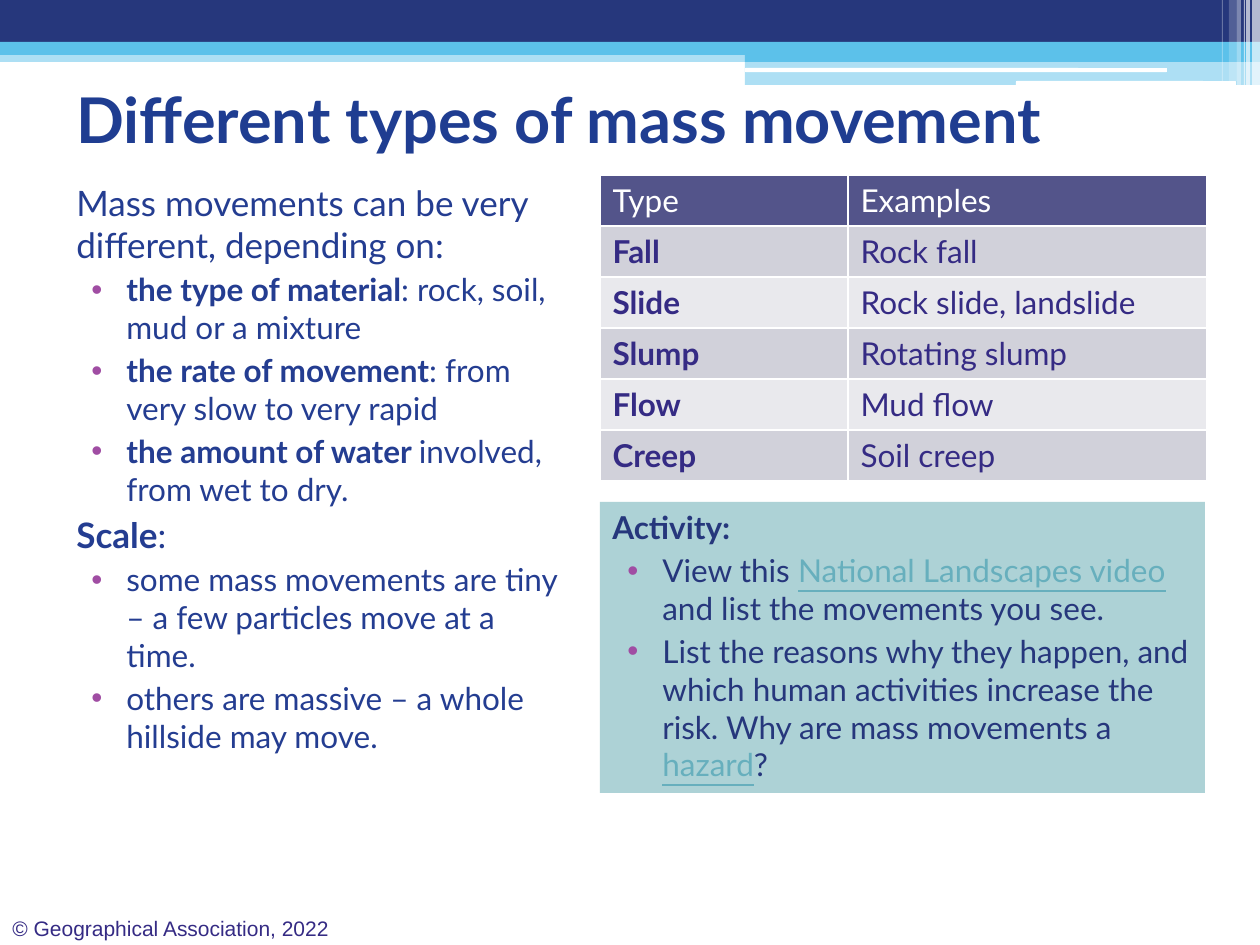
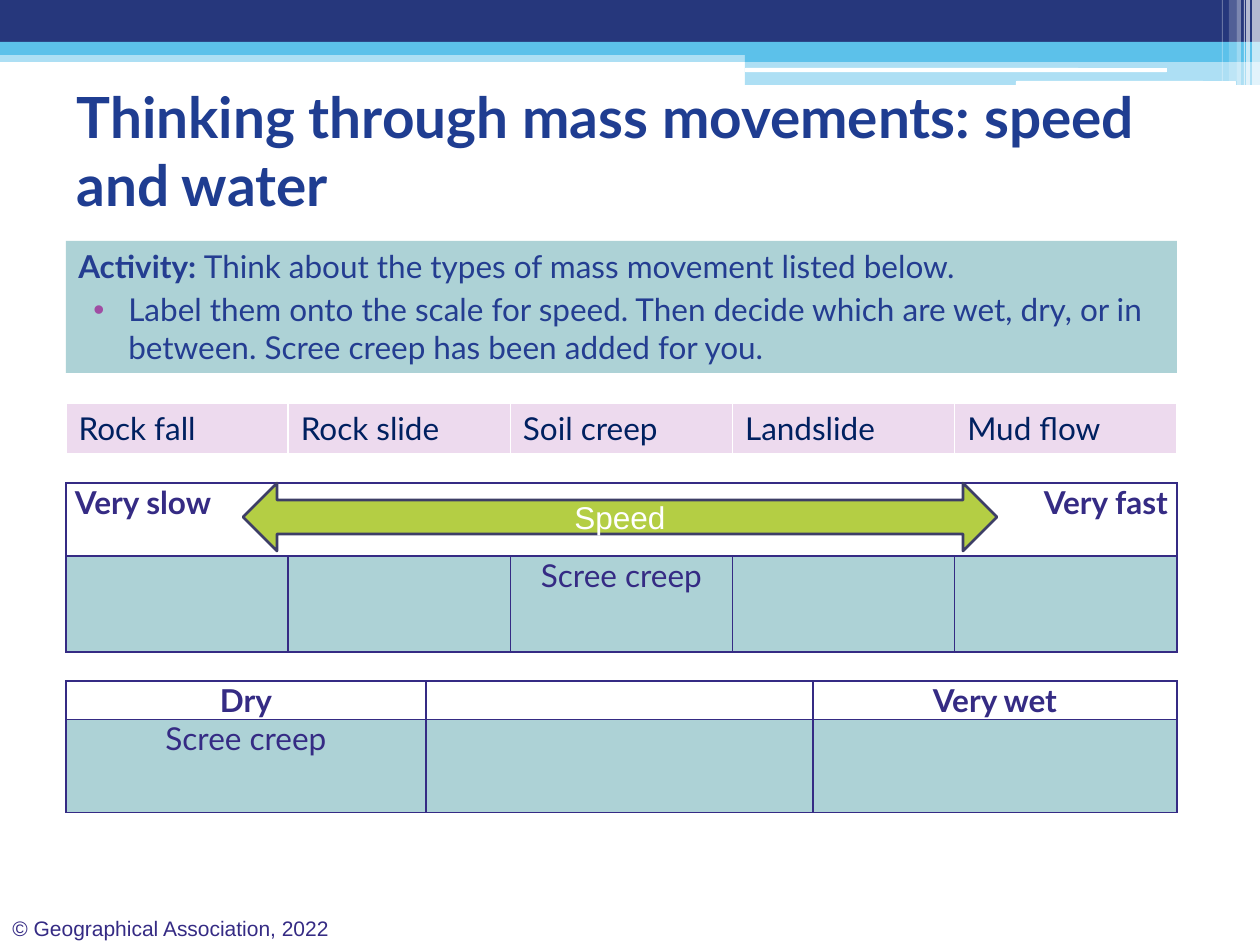
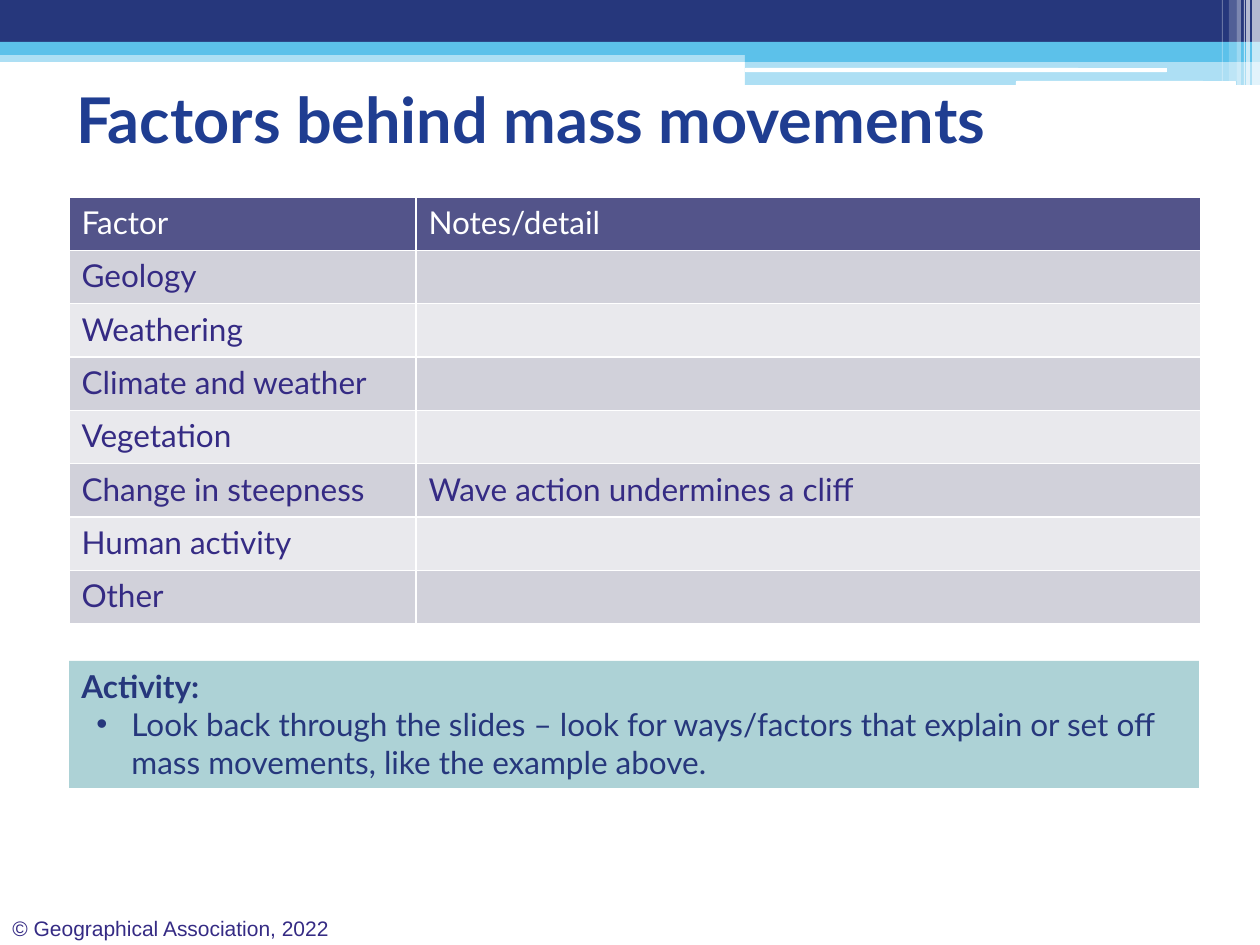
"""Build three slides on types, speed and causes of mass movement."""
from lxml import etree
from pptx import Presentation
from pptx import util as u
from pptx.dml.color import RGBColor
from pptx.enum import shapes, text
from pptx.oxml.ns import qn

PX = 914400 / 126
NAVY, BLUE, SKY, WHITE = "26377C", "243D91", "5CC1EA", "FFFFFF"
INDIGO, TEAL, PURPLE = "352B84", "ADD2D6", "A04DA3"
HEADER, BAND_DARK, BAND_LIGHT = "53548A", "D1D1DA", "E9E9ED"
BOLD = {"bold": True}
LINK = {"underline": True, "color": "67AFBD"}
LEFT, CENTER, RIGHT = text.PP_ALIGN.LEFT, text.PP_ALIGN.CENTER, text.PP_ALIGN.RIGHT
RECT, ROUND = shapes.MSO_SHAPE.RECTANGLE, shapes.MSO_SHAPE.ROUNDED_RECTANGLE
BANDS = [
    (RECT, (0, 50, 1260, 12), SKY, 50),
    (RECT, (0, 0, 1260, 42), NAVY, 100),
    (RECT, (0, 42, 1260, 13), SKY, 100),
    (RECT, (745, 49, 515, 13), SKY, 100),
    (RECT, (745, 62, 515, 23), SKY, 50),
    (ROUND, (745, 68, 422, 4), WHITE, 100),
    (ROUND, (1016, 81, 220, 5), WHITE, 100),
    (RECT, (1252, 0, 8, 85), WHITE, 65),
    (RECT, (1246, 0, 4, 85), WHITE, 65),
    (RECT, (1244, 0, 1, 85), WHITE, 60),
    (RECT, (1237, 0, 4, 85), WHITE, 40),
    (RECT, (1229, 0, 8, 81), WHITE, 20),
    (RECT, (1222, 0, 1, 81), WHITE, 30),
]


def px(length):
    return round(length * PX)


def rgb(value):
    return RGBColor.from_string(value)


def child(parent, tag, **attributes):
    return etree.SubElement(parent, qn(tag), attributes)


class Deck:
    """Hold the shared style and the current slide, and draw each kind of element."""

    def __init__(self):
        self.show = Presentation()
        self.show.slide_width, self.show.slide_height = px(1260), px(945)
        self.base = {"name": "Lato", "size": 18, "bold": False, "color": INDIGO}

    def slide(self, heading, top=45, size=36):
        self.page = self.show.slides.add_slide(self.show.slide_layouts[5])
        for kind, box, fill, opacity in BANDS:
            self.shape(kind, box, fill, opacity)
        self.textbox((0, 909, 362, 37), [["© Geographical Association, 2022"]],
                     name="Arial", size=12)
        title = self.page.shapes.title
        title.left, title.top, title.width, title.height = map(px, (64, top, 1134, 147))
        self.fill_frame(title.text_frame, [[heading]], anchor=text.MSO_ANCHOR.MIDDLE,
                        size=size, color="1F3D91", bold=True)

    def style_font(self, font, values):
        values = {**self.base, **values}
        font.color.rgb = rgb(values.pop("color"))
        values["size"] = u.Pt(values["size"])
        for key, value in values.items():
            setattr(font, key, value)

    def fill_paragraph(self, paragraph, runs, align=LEFT, bullet=None, gap=0, **style):
        if bullet:
            props = paragraph._p.get_or_add_pPr()
            props.set("marL", str(px(50)))
            props.set("indent", str(px(-35)))
            child(child(props, "a:buClr"), "a:srgbClr", val=bullet)
            child(props, "a:buFont", typeface="Arial")
            child(props, "a:buChar", char="•")
        paragraph.alignment = align
        if gap:
            paragraph.space_before = u.Pt(gap)
        for part in runs:
            words, extra = (part, {}) if isinstance(part, str) else part
            run = paragraph.add_run()
            run.text = words
            self.style_font(run.font, {**style, **extra})

    def fill_frame(self, frame, lines, anchor=text.MSO_ANCHOR.TOP, align=LEFT,
                   bullet=PURPLE, gap=3, **style):
        settings = {"word_wrap": True, "auto_size": text.MSO_AUTO_SIZE.NONE,
                    "vertical_anchor": anchor}
        for key, value in settings.items():
            setattr(frame, key, value)
        for number, line in enumerate(lines):
            paragraph = frame.add_paragraph() if number else frame.paragraphs[0]
            bulleted = line[0] == "•"
            self.fill_paragraph(paragraph, line[1:] if bulleted else line, align,
                                bullet if bulleted else None, gap if number else 0, **style)

    def textbox(self, box, lines, **style):
        frame = self.page.shapes.add_textbox(*map(px, box)).text_frame
        self.fill_frame(frame, lines, **style)

    def shape(self, kind, box, fill, opacity=100, outline=None):
        shape = self.page.shapes.add_shape(kind, *map(px, box))
        shape.shadow.inherit = False
        shape.fill.solid()
        shape.fill.fore_color.rgb = rgb(fill)
        if opacity < 100:
            color = shape._element.spPr.find(qn("a:solidFill"))[0]
            child(color, "a:alpha", val=str(opacity * 1000))
        if outline:
            shape.line.color.rgb = rgb(outline)
            shape.line.width = u.Pt(1.5)
        else:
            shape.line.fill.background()
        return shape

    def activity(self, box, lines, **style):
        self.fill_frame(self.shape(RECT, box, TEAL).text_frame, lines, **style)

    def table(self, box, rows, look, border=WHITE, widths=(), heights=(), tight=False):
        frame = self.page.shapes.add_table(len(rows), len(rows[0]), *map(px, box))
        table = frame.table
        table.first_row = table.horz_banding = False
        for column, width in zip(table.columns, widths):
            column.width = px(width)
        for row, height in zip(table.rows, heights):
            row.height = px(height)
        insets = {"margin_left": px(9), "margin_right": px(9),
                  "margin_top": 0, "margin_bottom": 0} if tight else {}
        for r, row in enumerate(rows):
            for c, words in enumerate(row):
                cell, style = table.cell(r, c), look(r, c)
                for key, value in insets.items():
                    setattr(cell, key, value)
                self.borders(cell, border, style.pop("edges", "LRTB"))
                cell.fill.solid()
                cell.fill.fore_color.rgb = rgb(style.pop("fill"))
                if words:
                    self.fill_paragraph(cell.text_frame.paragraphs[0], [words], **style)

    def borders(self, cell, color, edges):
        props = cell._tc.get_or_add_tcPr()
        for side in "LRTB":
            line = child(props, f"a:ln{side}", w=str(u.Pt(1)))
            if side in edges:
                child(child(line, "a:solidFill"), "a:srgbClr", val=color)
            else:
                child(line, "a:noFill")


def banded(row, column):
    if row == 0:
        return {"fill": HEADER, "color": WHITE}
    return {"fill": BAND_DARK if row % 2 else BAND_LIGHT}


def banded_bold(row, column):
    return {**banded(row, column), "bold": row > 0 and column == 0}


def speed_scale(row, column):
    if row:
        return {"fill": TEAL, "align": CENTER}
    edges = {0: "LTB", 4: "RTB"}.get(column, "TB")
    return {"fill": WHITE, "edges": edges, "bold": True,
            "align": RIGHT if column == 4 else LEFT}


def water_scale(row, column):
    return {"fill": TEAL if row else WHITE, "bold": row == 0, "align": CENTER}


def movement_strip(row, column):
    return {"fill": "EDDAEE", "color": "002060"}


def types_slide(deck):
    deck.slide("Different types of mass movement")
    types = [("Type", "Examples"), ("Fall", "Rock fall"),
             ("Slide", "Rock slide, landslide"), ("Slump", "Rotating slump"),
             ("Flow", "Mud flow"), ("Creep", "Soil creep")]
    deck.table((600, 175, 607, 306), types, banded_bold, widths=(248, 359))
    large = {"size": 20}
    deck.textbox((64, 175, 518, 617), [
        [("Mass movements can be very different, depending on:", large)],
        ["•", ("the type of material", BOLD), ": rock, soil, mud or a mixture"],
        ["•", ("the rate of movement", BOLD), ": from very slow to very rapid"],
        ["•", ("the amount of water ", BOLD), "involved, from wet to dry."],
        [("Scale", {**large, **BOLD}), (":", large)],
        ["•", "some mass movements are tiny – a few particles move at a time."],
        ["•", "others are massive – a whole hillside may move."],
    ], color=BLUE)
    deck.activity((600, 502, 605, 291), [
        [("Activity:", BOLD)],
        ["•", "View this ", ("National Landscapes video ", LINK),
         "and list the movements you see."],
        ["•", "List the reasons why they happen, and which human activities increase "
         "the risk. Why are mass movements a ", ("hazard", LINK), "?"],
    ], color=NAVY)


def speed_and_water_slide(deck):
    deck.slide("Thinking through mass movements: speed and water", top=76, size=32.4)
    left, width = 66, 1111
    deck.activity((left, 241, width, 132), [
        [("Activity: ", BOLD), "Think about the types of mass movement listed below."],
        ["•", "Label them onto the scale for speed. Then decide which are wet, dry, "
         "or in between. Scree creep has been added for you."],
    ], color=BLUE)
    deck.table((left, 483, width, 169),
               [("Very slow", "", "", "", "Very fast"), ("", "", "Scree creep", "", "")],
               speed_scale, INDIGO, heights=(73, 96), tight=True)
    deck.table((left, 681, width, 131),
               [("Dry", "", "Very wet"), ("Scree creep", "", "")],
               water_scale, INDIGO, (360, 387, 364), (38, 93), True)
    arrow = deck.shape(shapes.MSO_SHAPE.LEFT_RIGHT_ARROW, (243, 483, 754, 68),
                       "B4CE44", outline="3D3E66")
    deck.fill_frame(arrow.text_frame, [["Speed"]], text.MSO_ANCHOR.MIDDLE, CENTER,
                    name="Arial", color=WHITE)
    deck.table((left, 403, width, 51),
               [("Rock fall", "Rock slide", "Soil creep", "Landslide", "Mud flow")],
               movement_strip)


def factors_slide(deck):
    deck.slide("Factors behind mass movements")
    notes = {"Factor": "Notes/detail",
             "Change in steepness": "Wave action undermines a cliff"}
    factors = ["Factor", "Geology", "Weathering", "Climate and weather", "Vegetation",
               "Change in steepness", "Human activity", "Other"]
    deck.table((69, 197, 1132, 427), [(factor, notes.get(factor, "")) for factor in factors],
               banded, widths=(347, 785))
    deck.activity((69, 661, 1130, 127), [
        [("Activity:", BOLD)],
        ["•", "Look back through the slides – look for ways/factors that explain or "
         "set off mass movements, like the example above."],
    ], bullet=NAVY, gap=0, color=NAVY)


def main():
    deck = Deck()
    for build in (types_slide, speed_and_water_slide, factors_slide):
        build(deck)
    deck.show.save("out.pptx")


if __name__ == "__main__":
    main()
